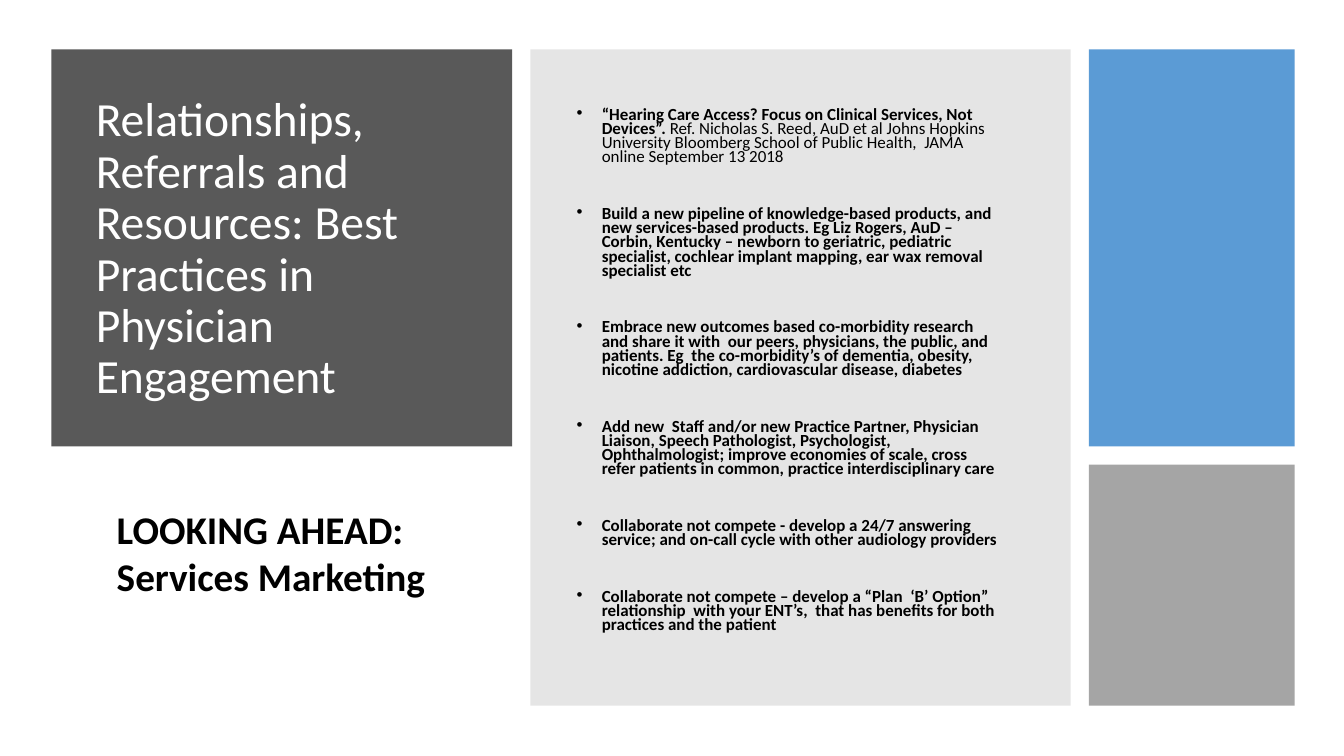
from dataclasses import dataclass

from lxml import etree
from pptx import Presentation
from pptx.dml.color import RGBColor
from pptx.enum.shapes import MSO_SHAPE
from pptx.enum.text import MSO_ANCHOR, MSO_AUTO_SIZE, PP_ALIGN
from pptx.oxml.ns import qn
from pptx.util import Inches, Pt

TITLE = "Relationships, Referrals and Resources: Best Practices in Physician Engagement"
KICKER = ["LOOKING AHEAD:", "Services Marketing"]

# Each point is a bold part and an optional regular part
POINTS = [
    ("“Hearing Care Access? Focus on Clinical Services, Not Devices”. ",
     "Ref. Nicholas S. Reed, AuD et al Johns Hopkins University Bloomberg School "
     "of Public Health,  JAMA online September 13 2018"),
    ("Build a new pipeline of knowledge-based products, and new services-based "
     "products. Eg Liz Rogers, AuD – Corbin, Kentucky – newborn to geriatric, "
     "pediatric specialist, cochlear implant mapping, ear wax removal specialist etc", ""),
    ("Embrace new outcomes based co-morbidity research and share it with  our peers, "
     "physicians, the public, and patients. Eg  the co-morbidity’s of dementia, "
     "obesity, nicotine addiction, cardiovascular disease, diabetes", ""),
    ("Add new  Staff and/or new Practice Partner, Physician Liaison, Speech "
     "Pathologist, Psychologist, Ophthalmologist; improve economies of scale, cross "
     "refer patients in common, practice interdisciplinary care", ""),
    ("Collaborate not compete - develop a 24/7 answering service; and on-call cycle "
     "with other audiology providers", ""),
    ("Collaborate not compete – develop a “Plan  ‘B’ Option”  relationship  with your "
     "ENT’s,  that has benefits for both practices and the patient", ""),
]


@dataclass(frozen=True)
class Theme:
    font: str = "Calibri"
    title_size: float = 34
    kicker_size: float = 28
    point_size: float = 12.1
    point_gap: float = 30.3
    white: str = "FFFFFF"
    ink: str = "000000"
    title_panel: str = "595959"
    points_panel: str = "808080"
    points_opacity: int = 20
    upper_tile: str = "5B9BD5"
    lower_tile: str = "A5A5A5"


THEME = Theme()

# Three columns and two rows, in inches
GAP = 0.18
LEFT, TOP = 0.51, 0.49
COLUMN_WIDTHS = 4.57, 5.36, 2.04
UPPER_HEIGHT, LOWER_HEIGHT = 3.94, 2.39
FULL_HEIGHT = UPPER_HEIGHT + GAP + LOWER_HEIGHT
COLUMNS = [LEFT + sum(COLUMN_WIDTHS[:i]) + i * GAP for i in range(3)]
LOWER_TOP = TOP + UPPER_HEIGHT + GAP

# Column, top, height, colour, opacity in percent
PANELS = [
    (0, TOP, UPPER_HEIGHT, THEME.title_panel, 100),
    (1, TOP, FULL_HEIGHT, THEME.points_panel, THEME.points_opacity),
    (2, TOP, UPPER_HEIGHT, THEME.upper_tile, 100),
    (2, LOWER_TOP, LOWER_HEIGHT, THEME.lower_tile, 100),
]


def add_panel(slide, column, top, height, color, opacity):
    panel = slide.shapes.add_shape(
        MSO_SHAPE.RECTANGLE, Inches(COLUMNS[column]), Inches(top),
        Inches(COLUMN_WIDTHS[column]), Inches(height))
    panel.shadow.inherit = False
    panel.line.fill.background()
    panel.fill.solid()
    panel.fill.fore_color.rgb = RGBColor.from_string(color)
    if opacity < 100:
        srgb = panel.fill._xPr.find(".//" + qn("a:srgbClr"))
        etree.SubElement(srgb, qn("a:alpha"), val=str(opacity * 1000))


def add_run(paragraph, text, size, color=THEME.ink, bold=False):
    run = paragraph.add_run()
    run.text = text
    run.font.name = THEME.font
    run.font.size = Pt(size)
    run.font.bold = bold
    run.font.color.rgb = RGBColor.from_string(color)


def paragraphs(frame, items):
    """Yield a paragraph with each item, using the frame's first paragraph first."""
    for index, item in enumerate(items):
        yield (frame.add_paragraph() if index else frame.paragraphs[0]), item


def add_bullet(paragraph):
    properties = paragraph._p.get_or_add_pPr()
    properties.set("marL", str(Inches(0.25)))
    properties.set("indent", str(-Inches(0.25)))
    etree.SubElement(properties, qn("a:buFont"), typeface="Arial")
    etree.SubElement(properties, qn("a:buChar"), char="•")


def fill_title(title):
    title.left, title.top = Inches(0.85), Inches(0.83)
    title.width, title.height = Inches(3.93), Inches(3.3)
    frame = title.text_frame
    frame.word_wrap = True
    frame.auto_size = MSO_AUTO_SIZE.NONE
    frame.vertical_anchor = MSO_ANCHOR.MIDDLE
    paragraph = frame.paragraphs[0]
    paragraph.alignment = PP_ALIGN.LEFT
    paragraph.line_spacing = 0.9
    add_run(paragraph, TITLE, THEME.title_size, THEME.white)


def add_points(slide):
    frame = slide.shapes.add_textbox(
        Inches(5.62), Inches(1.03), Inches(4.38), Inches(5.4)).text_frame
    frame.word_wrap = True
    for paragraph, (strong, plain) in paragraphs(frame, POINTS):
        add_bullet(paragraph)
        paragraph.line_spacing = 0.7
        if paragraph._p is not frame.paragraphs[0]._p:
            paragraph.space_before = Pt(THEME.point_gap)
        add_run(paragraph, strong, THEME.point_size, bold=True)
        if plain:
            add_run(paragraph, plain, THEME.point_size)


def add_kicker(slide):
    frame = slide.shapes.add_textbox(
        Inches(1.06), Inches(4.96), Inches(3.3), Inches(1.04)).text_frame
    frame.word_wrap = False
    frame.auto_size = MSO_AUTO_SIZE.SHAPE_TO_FIT_TEXT
    for paragraph, line in paragraphs(frame, KICKER):
        add_run(paragraph, line, THEME.kicker_size, bold=True)


def main():
    deck = Presentation()
    deck.slide_width, deck.slide_height = Inches(13.33), Inches(7.5)
    slide = deck.slides.add_slide(deck.slide_layouts[5])
    title = slide.shapes.title
    for panel in PANELS:
        add_panel(slide, *panel)
    # Bring the title in front of its panel
    slide.shapes._spTree.append(title._element)
    fill_title(title)
    add_points(slide)
    add_kicker(slide)
    deck.save("out.pptx")


if __name__ == "__main__":
    main()
